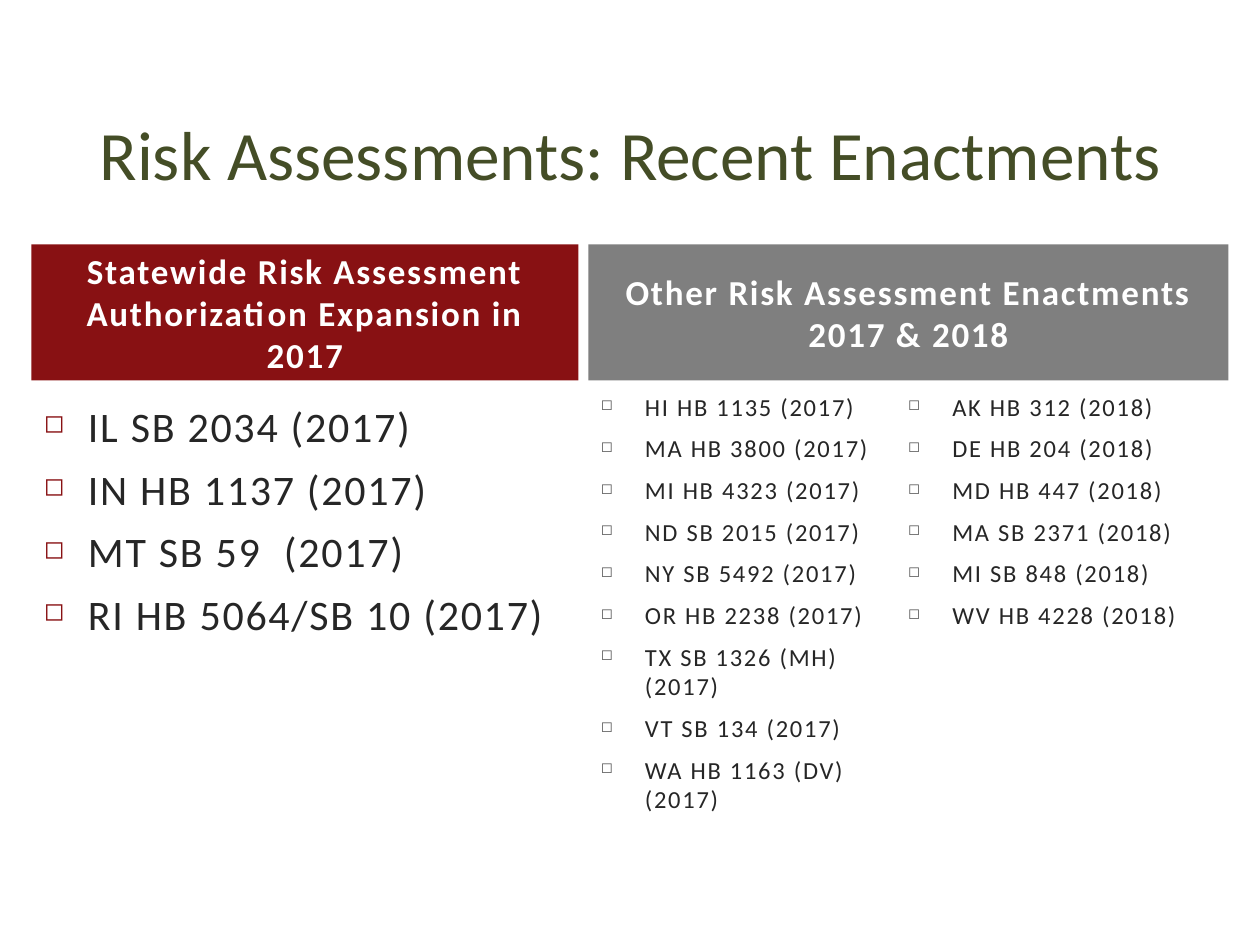
from dataclasses import dataclass

from lxml.etree import SubElement
from pptx import Presentation
from pptx.dml.color import RGBColor
from pptx.enum.shapes import MSO_SHAPE
from pptx.enum.text import MSO_ANCHOR, PP_ALIGN
from pptx.oxml.ns import qn
from pptx.util import Inches, Pt


@dataclass(frozen=True)
class Theme:
    font: str = "Calibri"
    title_color: str = "444D26"
    body_color: str = "262626"
    header_color: str = "FFFFFF"
    expansion_fill: str = "881113"
    other_fill: str = "7F7F7F"
    other_bullet: str = "5C5C5C"
    title_size: float = 39.6
    header_size: int = 20
    expansion_size: int = 24
    other_size: int = 14
    item_gap: int = 7
    letter_spacing: int = 1


class SlideBuilder:
    def __init__(self, slide, theme):
        self.slide = slide
        self.theme = theme

    def _write(self, paragraph, text, size, color, bold=False, spacing=0):
        run = paragraph.add_run()
        run.text = text
        formats = {"name": self.theme.font, "size": Pt(size), "bold": bold}
        for name, value in formats.items():
            setattr(run.font, name, value)
        run.font.color.rgb = RGBColor.from_string(color)
        if spacing:
            run._r.get_or_add_rPr().set("spc", str(spacing * 100))

    def _bullet(self, paragraph, color):
        properties = paragraph._p.get_or_add_pPr()
        indent = Inches(0.35)
        properties.set("marL", str(indent))
        properties.set("indent", str(-indent))
        bullet_color = SubElement(properties, qn("a:buClr"))
        SubElement(bullet_color, qn("a:srgbClr"), val=color)
        SubElement(properties, qn("a:buSzPct"), val="60000")
        SubElement(properties, qn("a:buChar"), char="◻")

    def _text_frame(self, left, top, width, height):
        box = self.slide.shapes.add_textbox(
            Inches(left), Inches(top), Inches(width), Inches(height))
        box.text_frame.word_wrap = True
        return box.text_frame

    def title(self, text, left, top, width, height):
        paragraph = self._text_frame(left, top, width, height).paragraphs[0]
        paragraph.alignment = PP_ALIGN.CENTER
        self._write(paragraph, text, self.theme.title_size, self.theme.title_color)

    def header(self, text, fill, left, top, width, height):
        band = self.slide.shapes.add_shape(
            MSO_SHAPE.RECTANGLE,
            Inches(left), Inches(top), Inches(width), Inches(height))
        band.shadow.inherit = False
        band.fill.solid()
        band.fill.fore_color.rgb = RGBColor.from_string(fill)
        band.line.fill.background()
        frame = band.text_frame
        frame.word_wrap = True
        frame.vertical_anchor = MSO_ANCHOR.MIDDLE
        paragraph = frame.paragraphs[0]
        paragraph.alignment = PP_ALIGN.CENTER
        self._write(paragraph, text, self.theme.header_size,
                    self.theme.header_color, True, self.theme.letter_spacing)

    def bullet_list(self, items, size, bullet_color, left, top, width, height):
        frame = self._text_frame(left, top, width, height)
        frame.margin_right = 0
        for index, item in enumerate(items):
            paragraph = frame.add_paragraph() if index else frame.paragraphs[0]
            self._bullet(paragraph, bullet_color)
            if index:
                paragraph.space_before = Pt(self.theme.item_gap)
            self._write(paragraph, item, size, self.theme.body_color,
                        spacing=self.theme.letter_spacing)


EXPANSIONS = [
    "IL SB 2034 (2017)", "IN HB 1137 (2017)",
    "MT SB 59  (2017)", "RI HB 5064/SB 10 (2017)",
]
OTHER_ENACTMENTS = [
    ["HI HB 1135 (2017)", "MA HB 3800 (2017)", "MI HB 4323 (2017)",
     "ND SB 2015 (2017)", "NY SB 5492 (2017)", "OR HB 2238 (2017)",
     "TX SB 1326 (MH) (2017)", "VT SB 134 (2017)", "WA HB 1163 (DV) (2017)"],
    ["AK HB 312 (2018)", "DE HB 204 (2018)", "MD HB 447 (2018)",
     "MA SB 2371 (2018)", "MI SB 848 (2018)", "WV HB 4228 (2018)"],
]


def main():
    presentation = Presentation()
    presentation.slide_width = Inches(10)
    presentation.slide_height = Inches(7.5)
    theme = Theme()
    builder = SlideBuilder(
        presentation.slides.add_slide(presentation.slide_layouts[6]), theme)

    expansion_left, expansion_width = 0.25, 4.34
    other_left, other_width = 4.67, 5.08
    header_top, header_height = 1.94, 1.08
    list_height = 3.92

    # Title
    builder.title("Risk Assessments: Recent Enactments", 0.17, 0.83, 9.67, 1.08)

    # Statewide expansions
    builder.header("Statewide Risk Assessment Authorization Expansion in 2017",
                   theme.expansion_fill, expansion_left, header_top,
                   expansion_width, header_height)
    builder.bullet_list(EXPANSIONS, theme.expansion_size, theme.expansion_fill,
                        expansion_left, 3.13, expansion_width, list_height)

    # Other enactments, one column per year
    builder.header("Other Risk Assessment Enactments 2017 & 2018",
                   theme.other_fill, other_left, header_top,
                   other_width, header_height)
    year_width = 2.44
    for column, enactments in enumerate(OTHER_ENACTMENTS):
        builder.bullet_list(enactments, theme.other_size, theme.other_bullet,
                            other_left + column * year_width, 3.06,
                            year_width, list_height)

    presentation.save("out.pptx")


if __name__ == "__main__":
    main()
